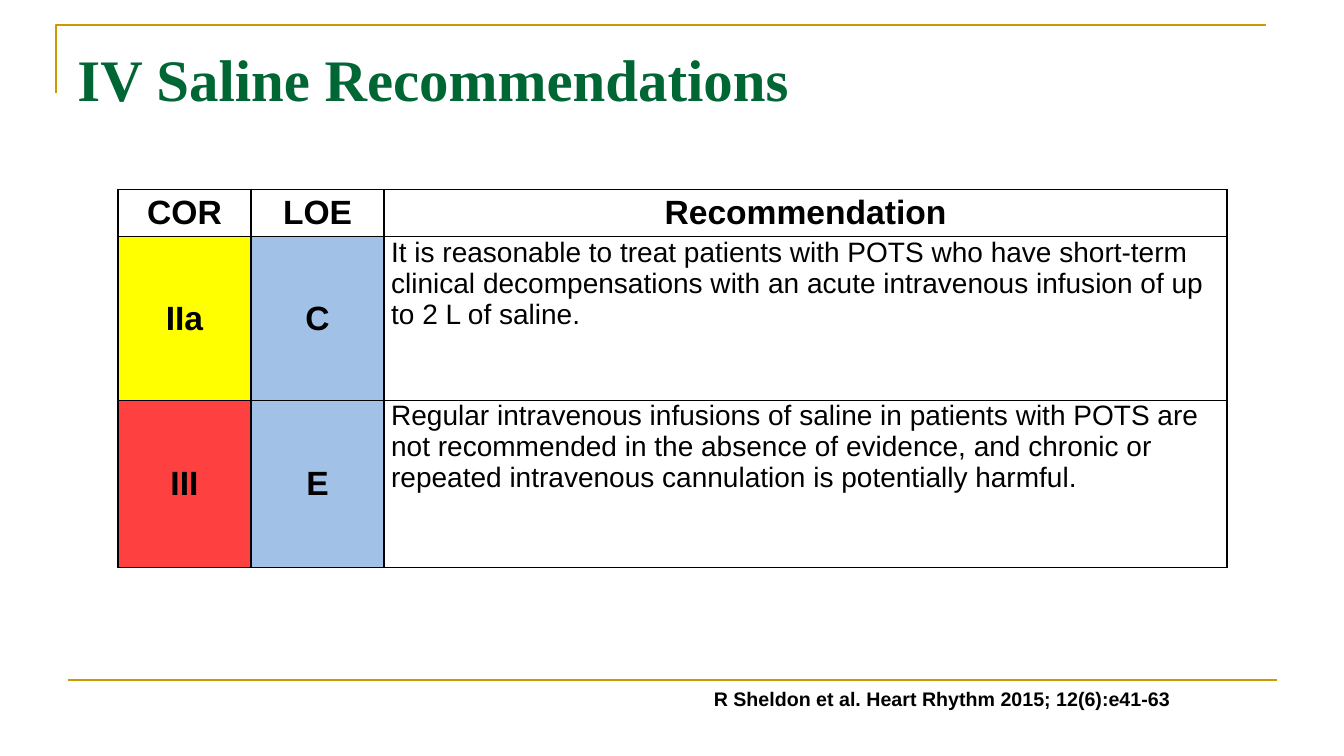
import pptx
import pptx.dml.color
import pptx.enum.shapes
import pptx.enum.text
import pptx.oxml
import pptx.oxml.ns
import pptx.util
from lxml import etree

Inches = pptx.util.Inches
RGBColor = pptx.dml.color.RGBColor
ALIGN = pptx.enum.text.PP_ALIGN
ANCHOR = pptx.enum.text.MSO_ANCHOR
qn = pptx.oxml.ns.qn

BLACK = RGBColor(0x00, 0x00, 0x00)
GOLD = RGBColor(0xCC, 0x99, 0x00)
GREEN = RGBColor(0x00, 0x66, 0x33)
YELLOW = RGBColor(0xFF, 0xFF, 0x00)
RED = RGBColor(0xFF, 0x00, 0x00)
BLUE = RGBColor(0xA1, 0xC1, 0xE7)

COLUMN_WIDTHS = (1.32, 1.32, 8.36)
ROW_HEIGHTS = (0.47, 1.62, 1.66)
HEADINGS = ("COR", "LOE", "Recommendation")
RECOMMENDATIONS = (
    ("IIa", "C", "It is reasonable to treat patients with POTS who have short-term "
     "clinical decompensations with an acute intravenous infusion of up to 2 L of saline."),
    ("III", "E", "Regular intravenous infusions of saline in patients with POTS are not "
     "recommended in the absence of evidence, and chronic or repeated intravenous "
     "cannulation is potentially harmful."),
)
CLASS_FILLS = {"IIa": (YELLOW, 100), "III": (RED, 75)}


class SlideBuilder:
    body_font = "Arial"
    title_font = "Times New Roman"
    rule_width = 1.5
    border_width = 1

    def __init__(self, slide):
        self.slide = slide

    def set_text(self, frame, text, size, font=body_font, color=BLACK, bold=True, align=ALIGN.LEFT):
        paragraph = frame.paragraphs[0]
        paragraph.text = text
        paragraph.alignment = align
        paragraph.font.name = font
        paragraph.font.size = pptx.util.Pt(size)
        paragraph.font.bold = bold
        paragraph.font.color.rgb = color
        return paragraph

    def style_rule(self, shape):
        shape.line.color.rgb = GOLD
        shape.line.width = pptx.util.Pt(self.rule_width)

    def corner_rule(self, points):
        start, *others = [(Inches(x), Inches(y)) for x, y in points]
        builder = self.slide.shapes.build_freeform(*start)
        builder.add_line_segments(others, close=False)
        shape = builder.convert_to_shape()
        shape.shadow.inherit = False
        shape.fill.background()
        self.style_rule(shape)

    def rule(self, left, right, top):
        connector = self.slide.shapes.add_connector(
            pptx.enum.shapes.MSO_CONNECTOR.STRAIGHT,
            Inches(left), Inches(top), Inches(right), Inches(top))
        self.style_rule(connector)
        etree.SubElement(connector._element.spPr, qn("a:effectLst"))

    def text_box(self, left, top, width, height, margins=(0.1, 0.05), anchor=ANCHOR.TOP):
        frame = self.slide.shapes.add_textbox(
            Inches(left), Inches(top), Inches(width), Inches(height)).text_frame
        frame.word_wrap = True
        frame.vertical_anchor = anchor
        frame.margin_left = frame.margin_right = Inches(margins[0])
        frame.margin_top = frame.margin_bottom = Inches(margins[1])
        return frame

    def border(self, cell):
        properties = cell._tc.get_or_add_tcPr()
        for index, side in enumerate(("lnL", "lnR", "lnT", "lnB")):
            properties.insert(index, pptx.oxml.parse_xml(
                f'<a:{side} {pptx.oxml.ns.nsdecls("a")} w="{pptx.util.Pt(self.border_width)}">'
                f'<a:solidFill><a:srgbClr val="{BLACK}"/></a:solidFill></a:{side}>'))

    def fill(self, cell, color, opacity):
        cell.fill.solid()
        cell.fill.fore_color.rgb = color
        if opacity < 100:
            swatch = cell._tc.tcPr.find(".//" + qn("a:srgbClr"))
            etree.SubElement(swatch, qn("a:alpha"), val=str(opacity * 1000))

    def cell(self, cell, text, is_advice, fill):
        cell.margin_left = cell.margin_right = Inches(0.07)
        cell.margin_top = cell.margin_bottom = 0
        cell.vertical_anchor = ANCHOR.TOP if is_advice else ANCHOR.MIDDLE
        self.set_text(cell.text_frame, text, 20 if is_advice else 24, bold=not is_advice,
                      align=ALIGN.LEFT if is_advice else ALIGN.CENTER)
        if fill:
            self.fill(cell, *fill)
        else:
            cell.fill.background()
        self.border(cell)

    def table(self, left, top, rows):
        table = self.slide.shapes.add_table(
            len(rows), len(COLUMN_WIDTHS), Inches(left), Inches(top),
            Inches(sum(COLUMN_WIDTHS)), Inches(sum(ROW_HEIGHTS))).table
        table.first_row = table.horz_banding = False
        for column, width in zip(table.columns, COLUMN_WIDTHS):
            column.width = Inches(width)
        for row, height in zip(table.rows, ROW_HEIGHTS):
            row.height = Inches(height)
        for row_index, texts in enumerate(rows):
            fills = (CLASS_FILLS[texts[0]], (BLUE, 100), None) if row_index else (None,) * 3
            for column_index, (text, fill) in enumerate(zip(texts, fills)):
                is_advice = row_index > 0 and column_index == 2
                self.cell(table.cell(row_index, column_index), text, is_advice, fill)


def main():
    presentation = pptx.Presentation()
    presentation.slide_width = Inches(13.33)
    presentation.slide_height = Inches(7.5)
    builder = SlideBuilder(presentation.slides.add_slide(presentation.slide_layouts[6]))

    builder.corner_rule([(0.56, 0.92), (0.56, 0.25), (12.56, 0.25)])
    builder.rule(0.67, 12.67, 6.75)
    builder.table(1.17, 1.88, (HEADINGS,) + RECOMMENDATIONS)
    title = builder.text_box(0.67, 0.3, 12, 0.95, anchor=ANCHOR.MIDDLE)
    builder.set_text(title, "IV Saline Recommendations", 42, builder.title_font, GREEN)
    citation = builder.text_box(7.08, 6.83, 5.17, 0.23, margins=(0, 0))
    paragraph = builder.set_text(citation, "R Sheldon et al. Heart Rhythm 2015; 12(6):e41-63", 14)
    paragraph.line_spacing = 0.97

    presentation.save("out.pptx")


if __name__ == "__main__":
    main()
